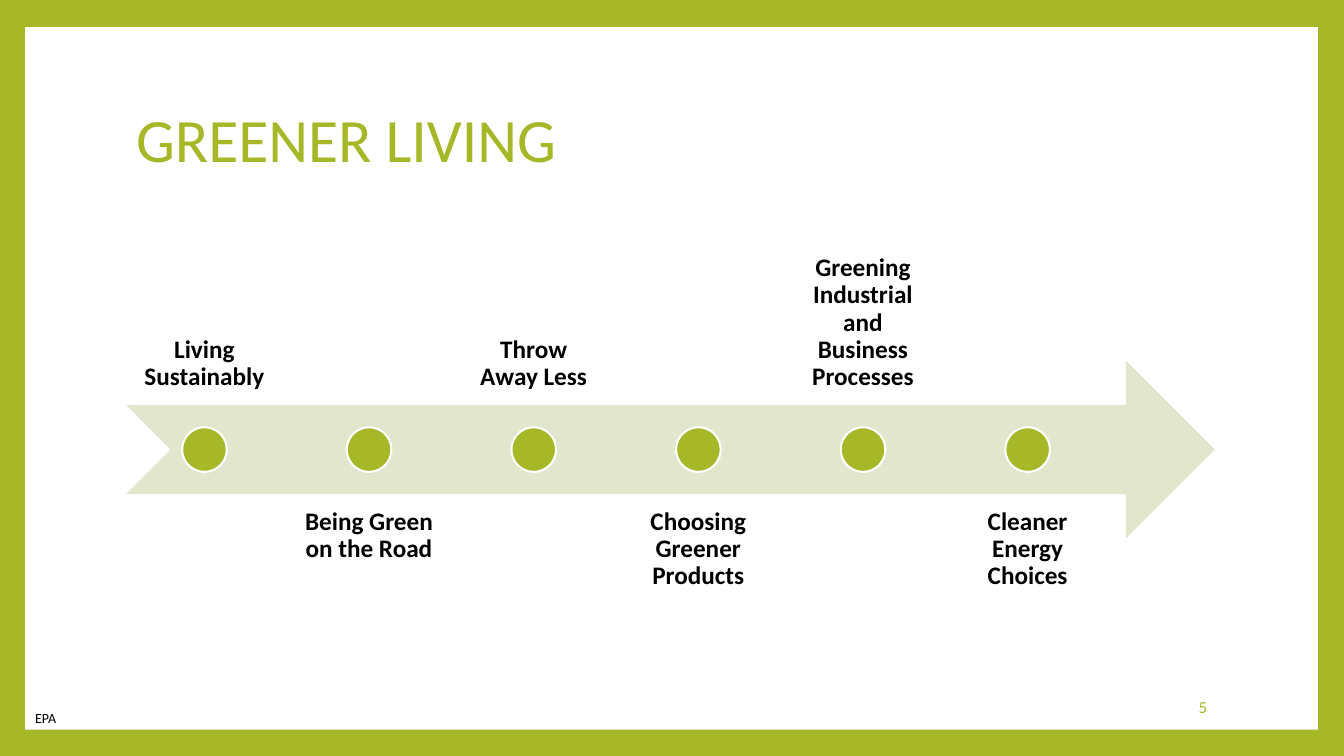
import pptx
import pptx.util
import pptx.dml.color
import pptx.enum.shapes
import pptx.enum.text

Inches = pptx.util.Inches
Pt = pptx.util.Pt
SHAPE = pptx.enum.shapes.MSO_SHAPE
ALIGN = pptx.enum.text.PP_ALIGN
ANCHOR = pptx.enum.text.MSO_ANCHOR

FONT = "Calibri"
COLORS = {"green": "A6B727", "pale": "E1E6CD", "white": "FFFFFF", "black": "000000"}
STEPS = [
    "Living Sustainably",
    "Being Green on the Road",
    "Throw Away Less",
    "Choosing Greener Products",
    "Greening Industrial and Business Processes",
    "Cleaner Energy Choices",
]


def color(name):
    return pptx.dml.color.RGBColor.from_string(COLORS[name])


def write(frame, text, size, ink, align=ALIGN.LEFT, anchor=ANCHOR.TOP, bold=False, lead=1.0):
    frame.vertical_anchor = anchor
    para = frame.paragraphs[0]
    para.alignment = align
    para.line_spacing = lead
    run = para.add_run()
    run.text = text
    run.font.name = FONT
    run.font.size = Pt(size)
    run.font.bold = bold
    run.font.color.rgb = color(ink)


def draw(slide, kind, box, fill, line=None):
    shape = slide.shapes.add_shape(kind, *map(Inches, box))
    shape.shadow.inherit = False
    shape.fill.solid()
    shape.fill.fore_color.rgb = color(fill)
    if line:
        shape.line.color.rgb = color(line)
        shape.line.width = Pt(1.5)
    else:
        shape.line.fill.background()


def label(slide, box, text, size, ink, pad=None, wrap=True, **style):
    frame = slide.shapes.add_textbox(*map(Inches, box)).text_frame
    frame.word_wrap = wrap
    if pad is not None:
        frame.margin_left = frame.margin_right = Inches(pad)
        frame.margin_top = frame.margin_bottom = Inches(pad)
    write(frame, text, size, ink, **style)


def frame_page(slide, box):
    """Fill the slide with green and lay the white panel on it."""
    slide.background.fill.solid()
    slide.background.fill.fore_color.rgb = color("green")
    draw(slide, SHAPE.RECTANGLE, box, "white")


def head(slide, box, text):
    title = slide.shapes.title
    title.left, title.top, title.width, title.height = map(Inches, box)
    write(title.text_frame, text, 44, "green", anchor=ANCHOR.MIDDLE, lead=0.9)


def timeline(slide, box, steps):
    """Draw an arrow with one dot per step and labels above and below in turn."""
    left, top, width, height = box
    band = 0.4 * height
    dot = 0.1 * height
    gap = 0.05  # as a share of a label's width
    count = len(steps)
    wide = 0.9 * width / (count + gap * (count - 1))
    draw(slide, SHAPE.NOTCHED_RIGHT_ARROW, (left, top + 0.3 * height, width, band), "pale")
    for i, step in enumerate(steps):
        x = left + i * wide * (1 + gap)
        above = i % 2 == 0
        y = top if above else top + height - band
        label(slide, (x, y, wide, band), step, 18, "black", pad=0.14, bold=True, lead=0.9,
              align=ALIGN.CENTER, anchor=ANCHOR.BOTTOM if above else ANCHOR.TOP)
        spot = (x + (wide - dot) / 2, top + (height - dot) / 2, dot, dot)
        draw(slide, SHAPE.OVAL, spot, "green", "white")


def main():
    deck = pptx.Presentation()
    deck.slide_width = Inches(13.33)
    deck.slide_height = Inches(7.5)
    slide = deck.slides.add_slide(deck.slide_layouts[5])
    frame_page(slide, (0.25, 0.27, 12.82, 6.97))
    head(slide, (1.25, 0.67, 10.8, 1.48), "GREENER LIVING")
    timeline(slide, (1.25, 2.25, 10.8, 4.42), STEPS)
    label(slide, (10.2, 6.81, 1.87, 0.4), "5", 12, "green",
          align=ALIGN.RIGHT, anchor=ANCHOR.MIDDLE)
    label(slide, (0.25, 6.99, 0.45, 0.27), "EPA", 10, "black", wrap=False)

    # The title placeholder comes first, so bring it in front of the white panel.
    slide.shapes[1].element.addnext(slide.shapes.title.element)
    deck.save("out.pptx")


if __name__ == "__main__":
    main()
